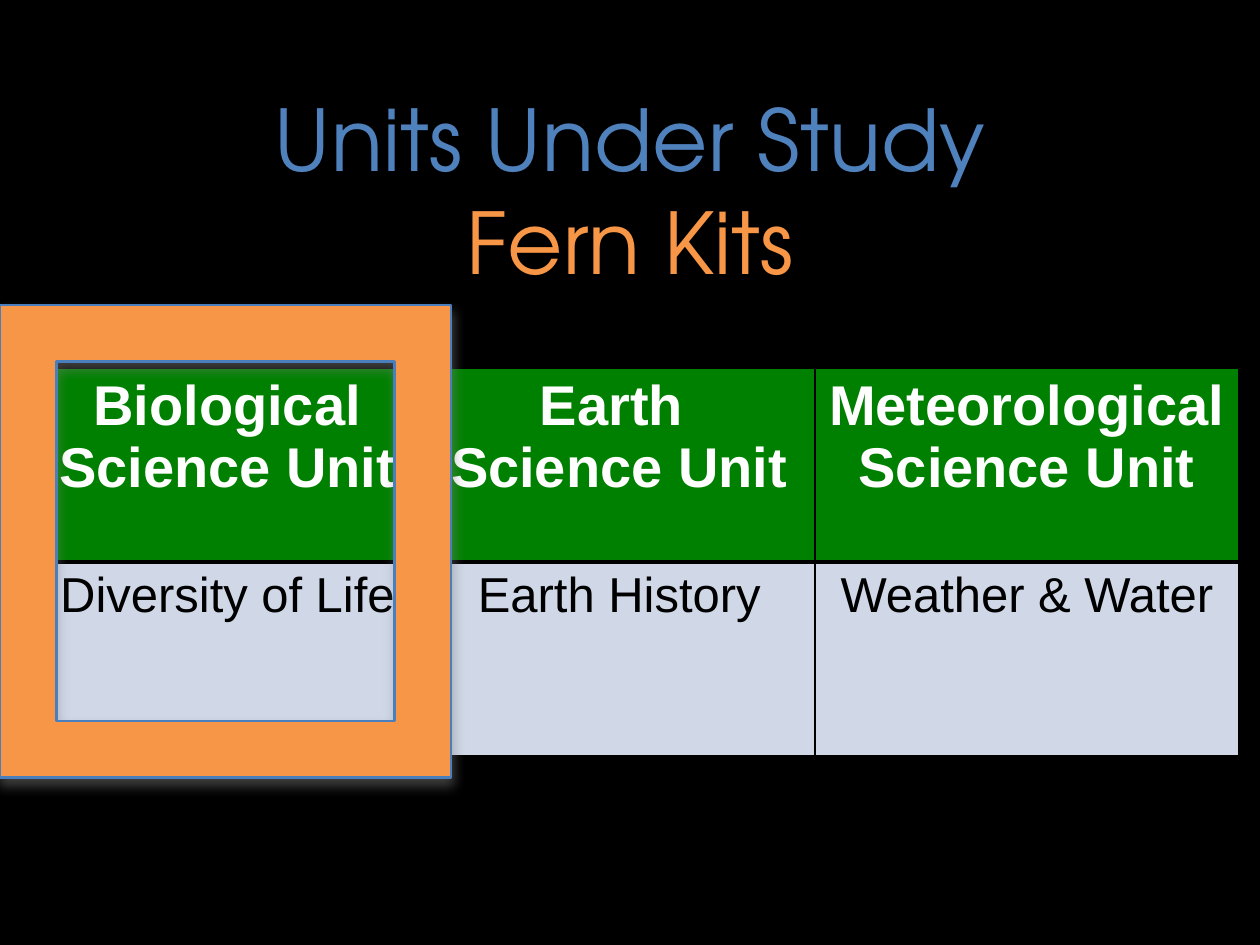
from lxml import etree
from pptx import Presentation
from pptx import util as u
from pptx.dml.color import RGBColor
from pptx.enum import shapes, text
from pptx.oxml.ns import qn

BLACK = RGBColor(0x00, 0x00, 0x00)
WHITE = RGBColor(0xFF, 0xFF, 0xFF)
BLUE = RGBColor(0x4F, 0x81, 0xBD)
OUTLINE_BLUE = RGBColor(0x4B, 0x7E, 0xBC)
ORANGE = RGBColor(0xF7, 0x96, 0x46)
GREEN = RGBColor(0x00, 0x80, 0x00)
PALE_BLUE = RGBColor(0xD0, 0xD8, 0xE8)
SHADOW_GRAY = RGBColor(0x80, 0x80, 0x80)

TITLE_FONT = "TeX Gyre Adventor"
BODY_FONT = "Arial"

COLUMN_WIDTHS = [3.11, 3.11, 3.36]
ROW_HEIGHT = 1.54
UNITS = [
    (["Biological", "Science Unit"], ["Diversity of Life"]),
    (["Earth ", "Science Unit"], ["Earth History"]),
    (["Meteorological", "Science Unit"], ["Weather & Water"]),
]


def add_run(paragraph, words, *, font, size, color, bold=False):
    run = paragraph.add_run()
    run.text = words
    run.font.name = font
    run.font.size = u.Pt(size)
    run.font.bold = bold
    run.font.color.rgb = color


def add_title(slide):
    box = slide.shapes.add_textbox(u.Inches(0.67), u.Inches(0.64),
                                   u.Inches(8.66), u.Inches(1.72))
    frame = box.text_frame
    frame.word_wrap = True
    frame.vertical_anchor = text.MSO_ANCHOR.TOP
    paragraph = frame.paragraphs[0]
    paragraph.alignment = text.PP_ALIGN.CENTER
    add_run(paragraph, "Units Under Study", font=TITLE_FONT, size=48.6, color=BLUE)
    paragraph.add_line_break()
    add_run(paragraph, "Fern Kits", font=TITLE_FONT, size=48.6, color=ORANGE)


def set_borders(cell, **widths):
    """Draw black borders; widths are points keyed by L, R, T and B."""
    properties = cell._tc.get_or_add_tcPr()
    for index, (side, width) in enumerate(widths.items()):
        line = etree.Element(qn(f"a:ln{side}"), w=str(u.Pt(width)))
        fill = etree.SubElement(line, qn("a:solidFill"))
        etree.SubElement(fill, qn("a:srgbClr"), val=str(BLACK))
        properties.insert(index, line)


def fill_cell(cell, lines, fill, **text_format):
    cell.fill.solid()
    cell.fill.fore_color.rgb = fill
    frame = cell.text_frame
    for index, line in enumerate(lines):
        paragraph = frame.add_paragraph() if index else frame.paragraphs[0]
        paragraph.alignment = text.PP_ALIGN.CENTER
        add_run(paragraph, line, font=BODY_FONT, **text_format)


def add_units_table(slide):
    table = slide.shapes.add_table(
        2, len(UNITS), u.Inches(0.25), u.Inches(2.92),
        u.Inches(sum(COLUMN_WIDTHS)), u.Inches(2 * ROW_HEIGHT)).table
    for row in table.rows:
        row.height = u.Inches(ROW_HEIGHT)
    for index, (width, (heading, kit)) in enumerate(zip(COLUMN_WIDTHS, UNITS)):
        table.columns[index].width = u.Inches(width)
        header, body = table.cell(0, index), table.cell(1, index)
        fill_cell(header, heading, GREEN, size=32, color=WHITE, bold=True)
        fill_cell(body, kit, PALE_BLUE, size=28, color=BLACK)
        set_borders(header, L=1, R=1, T=1, B=3)
        set_borders(body, L=1, R=1, T=3, B=1)


def add_drop_shadow(shape, *, blur, distance, opacity):
    """Cast a shadow straight down; blur and distance are points."""
    shape.shadow.inherit = False
    effects = shape._element.spPr.find(qn("a:effectLst"))
    shadow = etree.SubElement(
        effects, qn("a:outerShdw"), blurRad=str(u.Pt(blur)),
        dist=str(u.Pt(distance)), dir=str(90 * 60000), rotWithShape="0")
    color = etree.SubElement(shadow, qn("a:srgbClr"), val=str(SHADOW_GRAY))
    etree.SubElement(color, qn("a:alpha"), val=str(opacity * 1000))


def add_highlight_frame(slide):
    shape = slide.shapes.add_shape(
        shapes.MSO_SHAPE.FRAME, u.Inches(0), u.Inches(2.42),
        u.Inches(3.58), u.Inches(3.75))
    shape.fill.solid()
    shape.fill.fore_color.rgb = ORANGE
    shape.line.color.rgb = OUTLINE_BLUE
    shape.line.width = u.Pt(1.5)
    add_drop_shadow(shape, blur=7, distance=4, opacity=50)


def main():
    presentation = Presentation()
    presentation.slide_width = u.Inches(10)
    presentation.slide_height = u.Inches(7.5)
    slide = presentation.slides.add_slide(presentation.slide_layouts[6])
    slide.background.fill.solid()
    slide.background.fill.fore_color.rgb = BLACK
    add_title(slide)
    add_units_table(slide)
    add_highlight_frame(slide)
    presentation.save("out.pptx")


if __name__ == "__main__":
    main()
